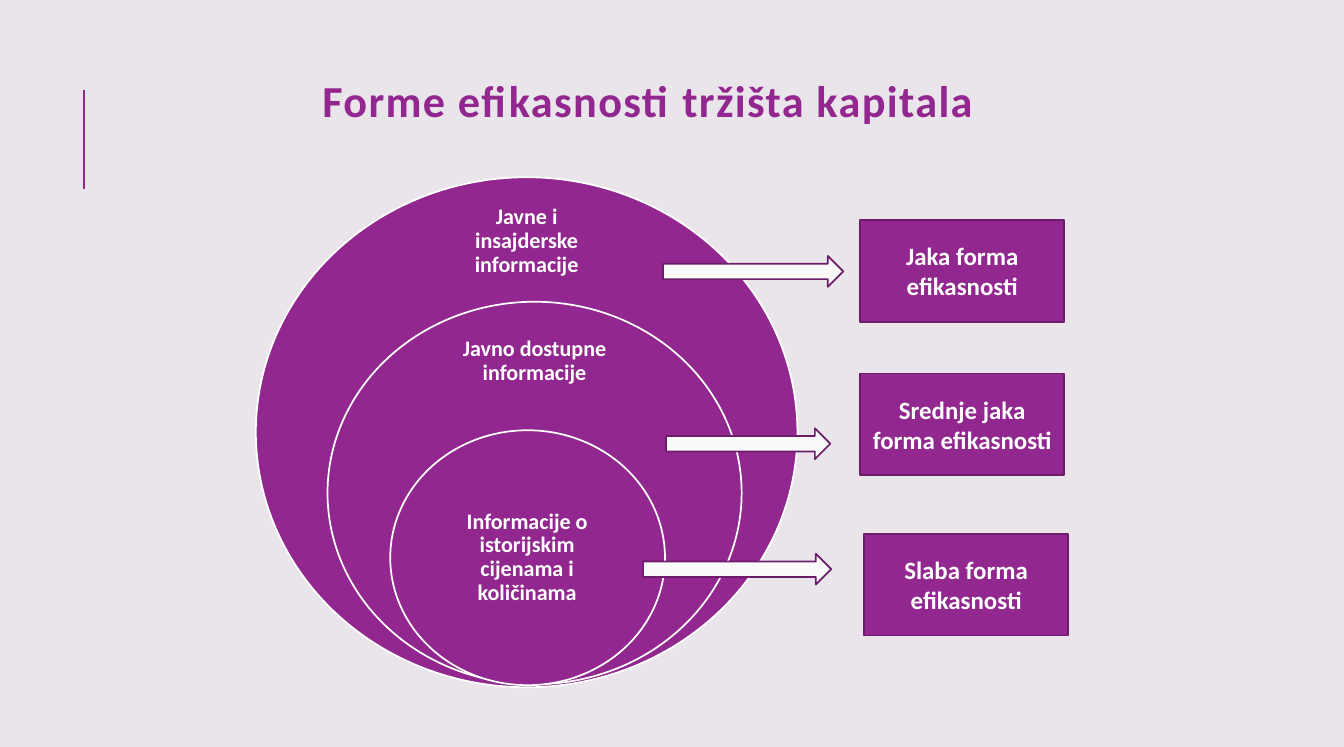
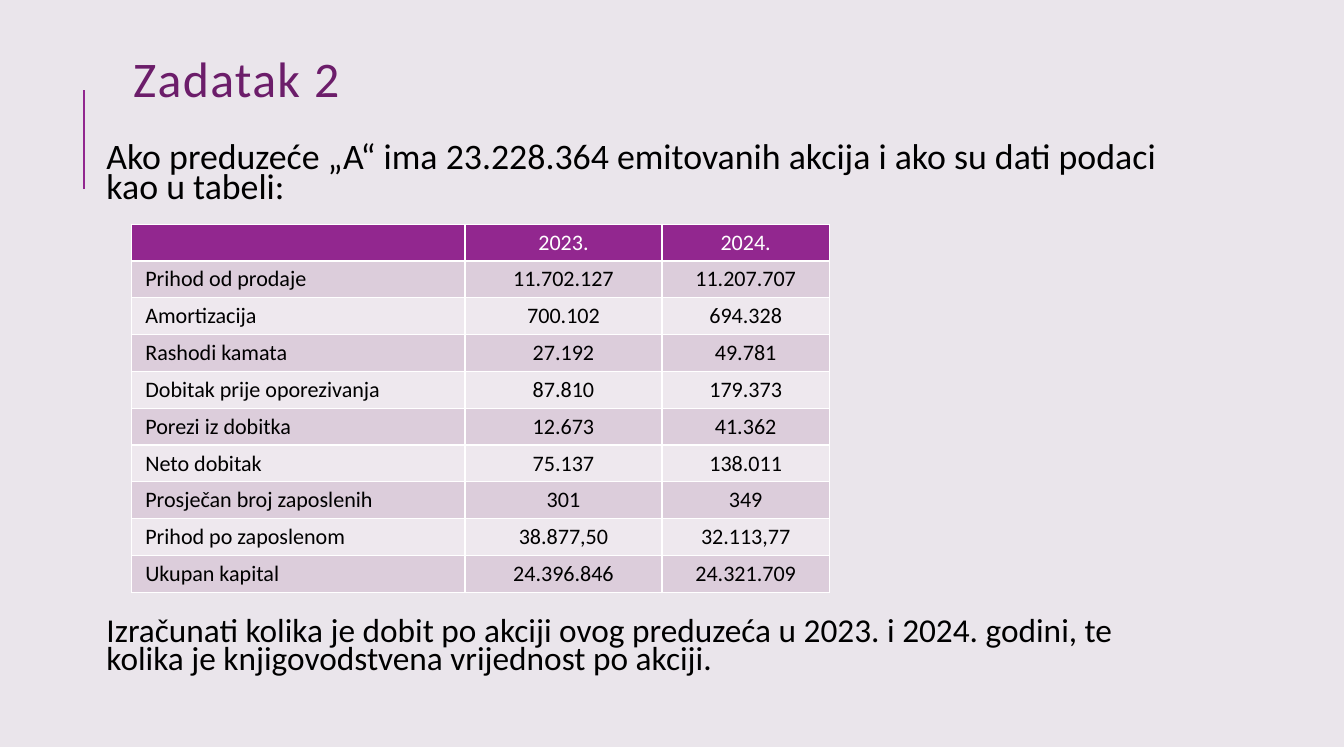
"""Build two slides on capital market efficiency and an earnings-per-share task."""
from dataclasses import dataclass

from lxml import etree
from pptx import Presentation
from pptx.dml.color import RGBColor
from pptx.enum.shapes import MSO_CONNECTOR, MSO_SHAPE
from pptx.enum.text import MSO_ANCHOR, PP_ALIGN
from pptx.oxml.ns import qn
from pptx.shapes.autoshape import Shape
from pptx.slide import Slide
from pptx.table import _Cell
from pptx.text.text import TextFrame
from pptx.util import Inches, Pt

STRAIGHT = MSO_CONNECTOR.STRAIGHT
OVAL, ARROW, RECTANGLE = MSO_SHAPE.OVAL, MSO_SHAPE.RIGHT_ARROW, MSO_SHAPE.RECTANGLE
MIDDLE, TOP = MSO_ANCHOR.MIDDLE, MSO_ANCHOR.TOP
LEFT, CENTER = PP_ALIGN.LEFT, PP_ALIGN.CENTER

FONT = "Calibri"
BACKGROUND = RGBColor(0xEA, 0xE5, 0xEB)
PURPLE = RGBColor(0x92, 0x27, 0x8F)
DARK_PURPLE = RGBColor(0x6C, 0x1D, 0x6A)
ARROW_FILL = RGBColor(0xFB, 0xFA, 0xFB)
WHITE = RGBColor(0xFF, 0xFF, 0xFF)
BLACK = RGBColor(0x00, 0x00, 0x00)
BAND_DARK = RGBColor(0xDC, 0xCD, 0xDB)
BAND_LIGHT = RGBColor(0xEE, 0xE8, 0xEE)


@dataclass(frozen=True)
class Box:
    """Position and size in inches."""

    left: float
    top: float
    width: float
    height: float

    def lengths(self) -> tuple[Inches, Inches, Inches, Inches]:
        """Return the four values as lengths."""
        return Inches(self.left), Inches(self.top), Inches(self.width), Inches(self.height)


@dataclass(frozen=True)
class TextStyle:
    """Look of a paragraph."""

    size: float
    color: RGBColor
    bold: bool = False
    align: PP_ALIGN = LEFT
    spacing: float = 1.0


@dataclass(frozen=True)
class InformationSet:
    """Nested circle with its label."""

    label: str
    circle: Box
    label_area: Box


@dataclass(frozen=True)
class EfficiencyForm:
    """Form of efficiency and the arrow that leads to it."""

    name: str
    left: float
    top: float
    arrow: Box


INFORMATION_SETS = (
    InformationSet("Javne i insajderske informacije",
                   Box(2.57, 1.78, 5.44, 5.12), Box(4.34, 2.04, 1.9, 0.77)),
    InformationSet("Javno dostupne informacije",
                   Box(3.29, 3.03, 4.16, 3.84), Box(4.4, 3.27, 1.94, 0.72)),
    InformationSet("Informacije o istorijskim cijenama i količinama",
                   Box(3.92, 4.32, 2.76, 2.56), Box(4.32, 4.96, 1.95, 1.28)),
)
FORMS = (
    EfficiencyForm("Jaka forma efikasnosti", 8.64, 2.21, Box(6.66, 2.57, 1.81, 0.31)),
    EfficiencyForm("Srednje jaka forma efikasnosti", 8.64, 3.75, Box(6.69, 4.3, 1.65, 0.31)),
    EfficiencyForm("Slaba forma efikasnosti", 8.68, 5.36, Box(6.46, 5.56, 1.89, 0.31)),
)
FINANCIALS = (
    ("", "2023.", "2024."),
    ("Prihod od prodaje", "11.702.127", "11.207.707"),
    ("Amortizacija", "700.102", "694.328"),
    ("Rashodi kamata", "27.192", "49.781"),
    ("Dobitak prije oporezivanja", "87.810", "179.373"),
    ("Porezi iz dobitka", "12.673", "41.362"),
    ("Neto dobitak", "75.137", "138.011"),
    ("Prosječan broj zaposlenih", "301", "349"),
    ("Prihod po zaposlenom", "38.877,50", "32.113,77"),
    ("Ukupan kapital", "24.396.846", "24.321.709"),
)
COLUMN_WIDTHS = (3.35, 1.98, 1.68)
ROW_HEIGHT = 0.37


def write(frame: TextFrame, text: str, style: TextStyle) -> None:
    """Fill a frame with one styled paragraph."""
    paragraph = frame.paragraphs[0]
    paragraph.text = text
    paragraph.alignment = style.align
    paragraph.line_spacing = style.spacing
    font = paragraph.font
    font.name, font.size, font.bold = FONT, Pt(style.size), style.bold
    font.color.rgb = style.color


def add_text(slide: Slide, text: str, area: Box, style: TextStyle,
             anchor: MSO_ANCHOR = MIDDLE, inset: float | None = None) -> TextFrame:
    """Add a wrapped text box, with equal insets if given."""
    frame = slide.shapes.add_textbox(*area.lengths()).text_frame
    frame.word_wrap = True
    frame.vertical_anchor = anchor
    if inset is not None:
        frame.margin_left = frame.margin_right = Inches(inset)
        frame.margin_top = frame.margin_bottom = Inches(inset)
    write(frame, text, style)
    return frame


def add_figure(slide: Slide, kind: MSO_SHAPE, area: Box, fill: RGBColor, line: RGBColor) -> Shape:
    """Add a flat outlined shape."""
    figure = slide.shapes.add_shape(kind, *area.lengths())
    figure.shadow.inherit = False
    figure.fill.solid()
    figure.fill.fore_color.rgb = fill
    figure.line.color.rgb = line
    figure.line.width = Pt(1.25)
    return figure


def add_base_slide(deck: Presentation, title: str, area: Box, style: TextStyle) -> Slide:
    """Add a slide with the accent line and a letter-spaced title."""
    slide = deck.slides.add_slide(deck.slide_layouts[6])
    accent = slide.shapes.add_connector(
        STRAIGHT, Inches(0.84), Inches(1.9), Inches(0.84), Inches(0.9))
    accent.line.color.rgb = PURPLE
    accent.line.width = Pt(1.5)
    etree.SubElement(accent._element.spPr, qn("a:effectLst"))
    frame = add_text(slide, title, area, style)
    frame.paragraphs[0].runs[0]._r.get_or_add_rPr().set("spc", "100")
    return slide


def style_cell(cell: _Cell, fill: RGBColor) -> None:
    """Give a cell white borders, a fill and insets."""
    properties = cell._tc.get_or_add_tcPr()
    for side in ("lnL", "lnR", "lnT", "lnB"):
        border = etree.SubElement(properties, qn(f"a:{side}"), w=str(Pt(1)))
        solid = etree.SubElement(border, qn("a:solidFill"))
        etree.SubElement(solid, qn("a:srgbClr"), val=str(WHITE))
    cell.fill.solid()
    cell.fill.fore_color.rgb = fill
    cell.margin_left = cell.margin_right = Inches(0.14)
    cell.margin_top = cell.margin_bottom = Inches(0.05)


def add_financials(slide: Slide) -> None:
    """Add the table of company figures."""
    area = Box(1.32, 2.25, sum(COLUMN_WIDTHS), ROW_HEIGHT * len(FINANCIALS))
    table = slide.shapes.add_table(
        len(FINANCIALS), len(COLUMN_WIDTHS), *area.lengths()).table
    for column, width in zip(table.columns, COLUMN_WIDTHS):
        column.width = Inches(width)
    for row_index, values in enumerate(FINANCIALS):
        table.rows[row_index].height = Inches(ROW_HEIGHT)
        band = BAND_DARK if row_index % 2 else BAND_LIGHT
        fill, color = (band, BLACK) if row_index else (PURPLE, WHITE)
        for column_index, value in enumerate(values):
            cell = table.cell(row_index, column_index)
            style_cell(cell, fill)
            align = CENTER if column_index else LEFT
            write(cell.text_frame, value, TextStyle(16, color, align=align))


def add_forms_slide(deck: Presentation) -> None:
    """Add the slide on forms of market efficiency."""
    slide = add_base_slide(deck, "Forme efikasnosti tržišta kapitala",
                           Box(1.13, 0.64, 10.76, 0.83),
                           TextStyle(32, PURPLE, True, CENTER, 0.8))
    label_style = TextStyle(16, WHITE, True, CENTER, 0.9)
    for item in INFORMATION_SETS:
        add_figure(slide, OVAL, item.circle, PURPLE, WHITE)
        add_text(slide, item.label, item.label_area, label_style, inset=0.12)
    for form in FORMS:
        add_figure(slide, ARROW, form.arrow, ARROW_FILL, DARK_PURPLE)
        area = Box(form.left, form.top, 2.05, 1.02)
        frame = add_figure(slide, RECTANGLE, area, PURPLE, DARK_PURPLE).text_frame
        frame.word_wrap = True
        frame.vertical_anchor = MIDDLE
        write(frame, form.name, TextStyle(18, WHITE, True, CENTER))


def add_task_slide(deck: Presentation) -> None:
    """Add the slide with the task and its data."""
    slide = add_base_slide(deck, "Zadatak 2", Box(1.24, 0.29, 10.66, 1.1),
                           TextStyle(36, DARK_PURPLE, spacing=0.8))
    add_text(slide, "Ako preduzeće „A“ ima 23.228.364 emitovanih akcija i ako su dati "
             "podaci kao u tabeli:", Box(1.02, 1.41, 10.87, 0.75),
             TextStyle(25.9, BLACK, spacing=0.7), TOP, 0.05)
    add_financials(slide)
    add_text(slide, "Izračunati kolika je dobit po akciji ovog preduzeća u 2023. i 2024. "
             "godini, te kolika je knjigovodstvena vrijednost po akciji.",
             Box(1.02, 6.18, 10.87, 0.75),
             TextStyle(24.1, BLACK, spacing=0.7), TOP, 0.05)


def main() -> None:
    """Create and save the presentation."""
    deck = Presentation()
    deck.slide_width, deck.slide_height = Inches(13.5), Inches(7.5)
    backdrop = deck.slide_master.background.fill
    backdrop.solid()
    backdrop.fore_color.rgb = BACKGROUND
    add_forms_slide(deck)
    add_task_slide(deck)
    deck.save("out.pptx")


if __name__ == "__main__":
    main()
